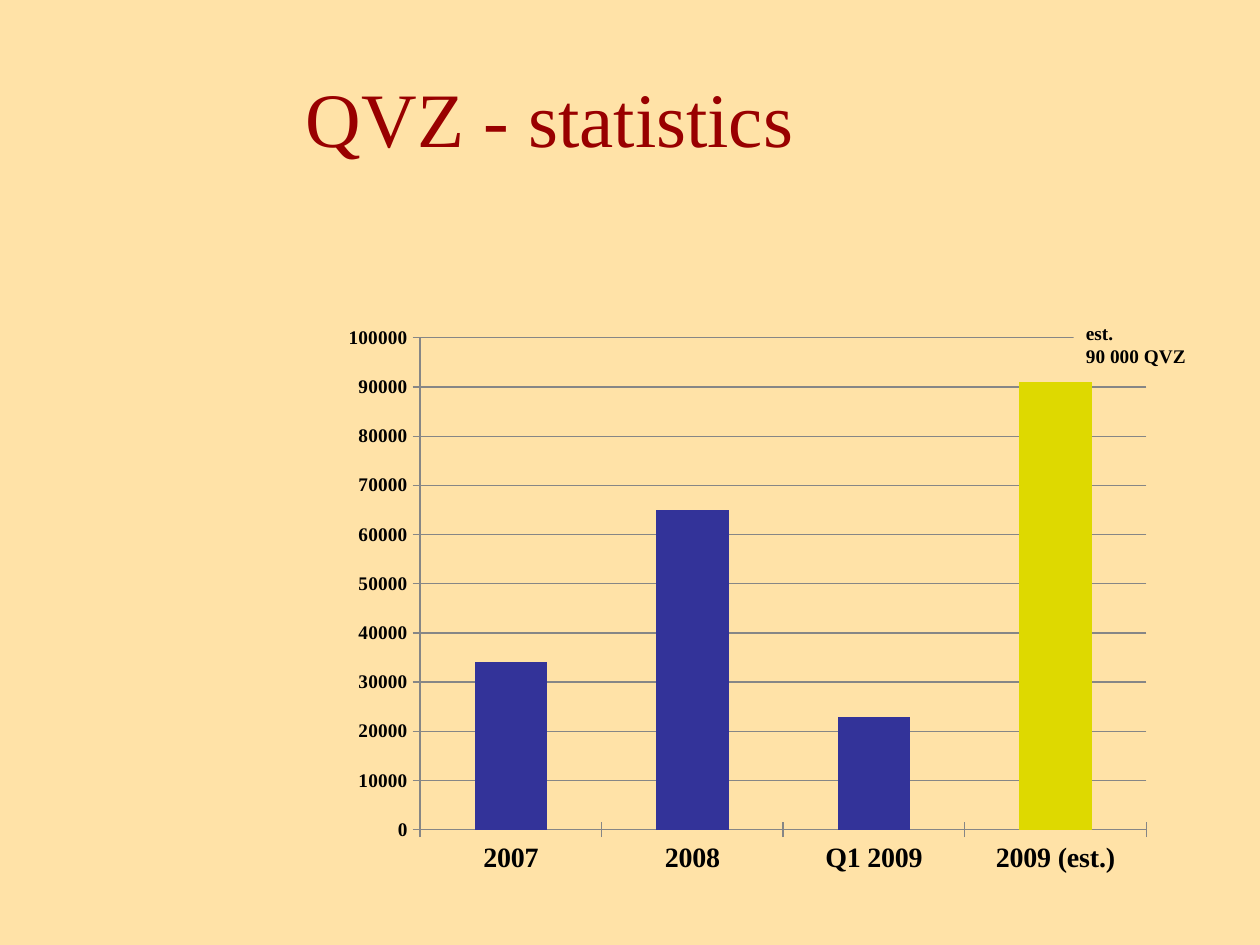
from lxml import etree
from pptx import Presentation
from pptx.chart.data import CategoryChartData
from pptx.dml.color import RGBColor
from pptx.enum.chart import XL_CHART_TYPE as ChartType, XL_TICK_MARK as TickMark
from pptx.enum.shapes import MSO_SHAPE as ShapeType
from pptx.enum.text import MSO_ANCHOR as Anchor, PP_ALIGN as Align
from pptx.oxml.ns import qn
from pptx.util import Inches, Pt

CREAM = RGBColor(0xFF, 0xE2, 0xA7)
DARK_RED = RGBColor(0x99, 0x00, 0x00)
BLACK = RGBColor(0x00, 0x00, 0x00)
BLUE = RGBColor(0x33, 0x33, 0x99)
YELLOW = RGBColor(0xDE, 0xD9, 0x00)
GRAY = RGBColor(0x86, 0x86, 0x86)
FONT = "Times New Roman"


def style_font(font, size, color, bold=False):
    font.name = FONT
    font.size = Pt(size)
    font.color.rgb = color
    font.bold = bold


def add_lines(paragraph, lines, size, color, bold=False):
    paragraph.alignment = Align.LEFT
    for index, line in enumerate(lines):
        if index:
            paragraph.add_line_break()
        run = paragraph.add_run()
        run.text = line
        style_font(run.font, size, color, bold)


def add_title(slide, box):
    frame = slide.shapes.add_textbox(*box).text_frame
    frame.word_wrap = True
    frame.vertical_anchor = Anchor.MIDDLE
    add_lines(frame.paragraphs[0], ["QVZ - statistics"], 44, DARK_RED)


def set_plot_layout(chart, x, y, width, height):
    plot_area = chart.plots[0]._element.getparent()
    layout = plot_area.find(qn("c:layout"))
    if layout is None:
        layout = etree.Element(qn("c:layout"))
        plot_area.insert(0, layout)
    manual = etree.SubElement(layout, qn("c:manualLayout"))
    settings = [("layoutTarget", "inner"), ("xMode", "edge"), ("yMode", "edge"),
                ("x", x), ("y", y), ("w", width), ("h", height)]
    for name, value in settings:
        etree.SubElement(manual, qn(f"c:{name}")).set("val", str(value))


def style_axis(axis, size):
    style_font(axis.tick_labels.font, size, BLACK, True)
    axis.major_tick_mark = TickMark.CROSS
    axis.minor_tick_mark = TickMark.NONE
    axis.format.line.color.rgb = GRAY


def add_statistics_chart(slide, box):
    data = CategoryChartData()
    data.categories = ["2007", "2008", "Q1 2009", "2009 (est.)"]
    data.add_series("Series 1", [34000, 65000, 23000, 91000])
    chart = slide.shapes.add_chart(ChartType.COLUMN_CLUSTERED, *box, data).chart
    chart.has_legend = False
    chart.has_title = False
    style_font(chart.font, 10, BLACK)
    set_plot_layout(chart, 0.13, 0.07, 0.82, 0.8)

    style_axis(chart.category_axis, 16)
    value_axis = chart.value_axis
    style_axis(value_axis, 11)
    value_axis.minimum_scale = 0
    value_axis.maximum_scale = 100000
    value_axis.major_unit = 10000
    value_axis.has_major_gridlines = True
    value_axis.major_gridlines.format.line.color.rgb = GRAY

    plot = chart.plots[0]
    plot.vary_by_categories = False
    plot.gap_width = 150
    series = plot.series[0]
    estimate = series.points[3]
    for bar, color in ((series, BLUE), (estimate, YELLOW)):
        bar.format.fill.solid()
        bar.format.fill.fore_color.rgb = color


def add_estimate_note(slide, box):
    shape = slide.shapes.add_shape(ShapeType.RECTANGLE, *box)
    shape.shadow.inherit = False
    shape.fill.solid()
    shape.fill.fore_color.rgb = CREAM
    shape.line.fill.background()
    frame = shape.text_frame
    frame.word_wrap = True
    frame.vertical_anchor = Anchor.TOP
    add_lines(frame.paragraphs[0], ["est.", "90 000 QVZ"], 11, BLACK, True)


def main():
    presentation = Presentation()
    presentation.slide_width = Inches(10)
    presentation.slide_height = Inches(7.5)
    slide = presentation.slides.add_slide(presentation.slide_layouts[6])
    slide.background.fill.solid()
    slide.background.fill.fore_color.rgb = CREAM
    add_title(slide, (Inches(2.33), Inches(0.3), Inches(7.42), Inches(1.25)))
    add_statistics_chart(slide, (Inches(2.42), Inches(2.34), Inches(7.03), Inches(4.88)))
    add_estimate_note(slide, (Inches(8.52), Inches(2.5), Inches(1.25), Inches(0.47)))
    presentation.save("out.pptx")


if __name__ == "__main__":
    main()
